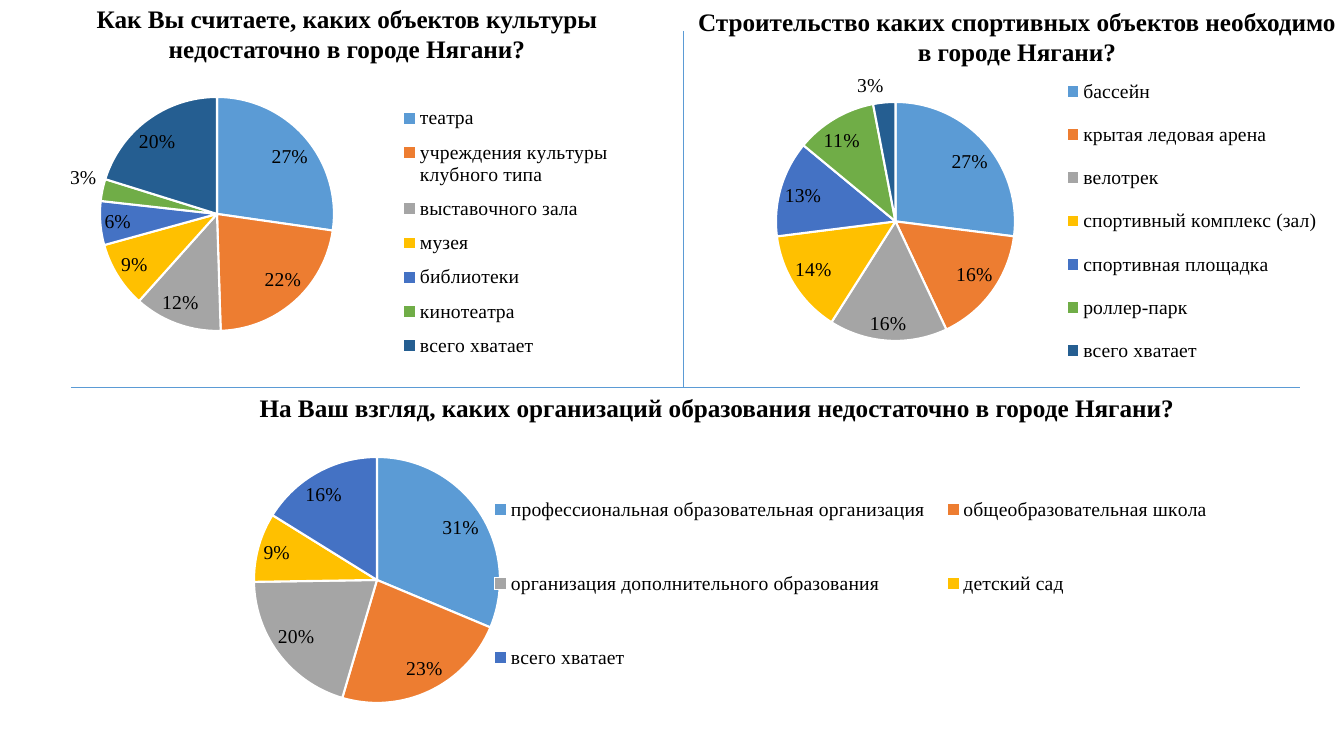
from dataclasses import dataclass

import pptx
import pptx.chart.data
import pptx.dml.color
import pptx.enum.chart
import pptx.enum.shapes
import pptx.enum.text
import pptx.oxml
import pptx.oxml.ns
import pptx.util

EMU_PER_PX = 914400 / 100.8
SERIF = "Times New Roman"
COLORS = {"text": "000000", "rule": "5B9BD5", "gap": "FFFFFF"}
SLICE_COLORS = ["5B9BD5", "ED7D31", "A5A5A5", "FFC000", "4472C4", "70AD47", "255E91"]
QUESTION_FONT = {"name": SERIF, "size": pptx.util.Pt(18), "bold": True}
ANSWER_FONT = {"name": SERIF, "size": pptx.util.Pt(14), "bold": False}
CHART_FONT = {"name": "Calibri", "size": pptx.util.Pt(10)}
LABEL_FORMAT = {
    "show_percentage": True,
    "show_value": False,
    "number_format": "0%",
    "number_format_is_linked": False,
    "position": pptx.enum.chart.XL_LABEL_POSITION.BEST_FIT,
}


@dataclass(frozen=True)
class Box:
    left: int
    top: int
    width: int
    height: int


@dataclass(frozen=True)
class Question:
    text: str
    box: Box


@dataclass(frozen=True)
class Rule:
    x1: int
    y1: int
    x2: int
    y2: int


@dataclass(frozen=True)
class Poll:
    """Survey answers; pie and legend boxes are in slide pixels."""
    box: Box
    pie: Box
    legend: Box
    answers: dict[str, int]


QUESTIONS = [
    Question("Как Вы считаете, каких объектов культуры недостаточно в городе Нягани?",
             Box(11, -2, 672, 72)),
    Question("Строительство каких спортивных объектов необходимо в городе Нягани?",
             Box(681, 1, 672, 72)),
    Question("На Ваш взгляд, каких организаций образования недостаточно в городе Нягани?",
             Box(134, 387, 1166, 40)),
]
RULES = [Rule(683, 31, 683, 387), Rule(71, 387, 1300, 387)]
POLLS = [
    Poll(Box(680, 59, 644, 324), Box(776, 102, 239, 239), Box(1060, 59, 264, 324), {
        "бассейн": 27,
        "крытая ледовая арена": 16,
        "велотрек": 16,
        "спортивный комплекс (зал)": 14,
        "спортивная площадка": 13,
        "роллер-парк": 11,
        "всего хватает": 3,
    }),
    Poll(Box(58, 441, 1182, 280), Box(254, 457, 246, 246), Box(479, 447, 744, 273), {
        "профессиональная образовательная организация": 31,
        "общеобразовательная школа": 23,
        "организация дополнительного образования": 20,
        "детский сад": 9,
        "всего хватает": 16,
    }),
    Poll(Box(-24, 83, 674, 286), Box(100, 97, 234, 234), Box(392, 95, 228, 274), {
        "театра": 27,
        "учреждения культуры клубного типа": 22,
        "выставочного зала": 12,
        "музея": 9,
        "библиотеки": 6,
        "кинотеатра": 3,
        "всего хватает": 20,
    }),
]


def px(length: int) -> pptx.util.Emu:
    return pptx.util.Emu(round(length * EMU_PER_PX))


def place(box: Box) -> list[pptx.util.Emu]:
    return [px(side) for side in (box.left, box.top, box.width, box.height)]


def rgb(color: str) -> pptx.dml.color.RGBColor:
    return pptx.dml.color.RGBColor.from_string(color)


def apply(target, values: dict) -> None:
    for attribute, value in values.items():
        setattr(target, attribute, value)


def style_font(font, values: dict) -> None:
    apply(font, values)
    font.color.rgb = rgb(COLORS["text"])


def add_question(slide, question: Question) -> None:
    frame = slide.shapes.add_textbox(*place(question.box)).text_frame
    frame.word_wrap = True
    frame.auto_size = pptx.enum.text.MSO_AUTO_SIZE.SHAPE_TO_FIT_TEXT
    paragraph = frame.paragraphs[0]
    paragraph.alignment = pptx.enum.text.PP_ALIGN.CENTER
    run = paragraph.add_run()
    run.text = question.text
    style_font(run.font, QUESTION_FONT)


def add_rule(slide, rule: Rule) -> None:
    line = slide.shapes.add_connector(
        pptx.enum.shapes.MSO_CONNECTOR.STRAIGHT,
        px(rule.x1), px(rule.y1), px(rule.x2), px(rule.y2))
    line.line.color.rgb = rgb(COLORS["rule"])
    line.line.width = pptx.util.Pt(0.5)
    effects = pptx.oxml.parse_xml(f'<a:effectLst {pptx.oxml.ns.nsdecls("a")}/>')
    line._element.spPr.append(effects)


def set_layout(parent, index: int, part: Box, whole: Box, inner: bool = False) -> None:
    """Fix a chart part at its share of the whole chart."""
    for old in parent.findall(pptx.oxml.ns.qn("c:layout")):
        parent.remove(old)
    shares = {
        "x": (part.left - whole.left) / whole.width,
        "y": (part.top - whole.top) / whole.height,
        "w": part.width / whole.width,
        "h": part.height / whole.height,
    }
    target = '<c:layoutTarget val="inner"/>' if inner else ""
    modes = '<c:xMode val="edge"/><c:yMode val="edge"/>'
    sizes = "".join(f'<c:{key} val="{share:.4f}"/>' for key, share in shares.items())
    parent.insert(index, pptx.oxml.parse_xml(
        f'<c:layout {pptx.oxml.ns.nsdecls("c")}><c:manualLayout>'
        f"{target}{modes}{sizes}</c:manualLayout></c:layout>"))


def add_poll(slide, poll: Poll) -> None:
    data = pptx.chart.data.CategoryChartData()
    data.categories = list(poll.answers)
    data.add_series("Series 1", list(poll.answers.values()))
    chart = slide.shapes.add_chart(
        pptx.enum.chart.XL_CHART_TYPE.PIE, *place(poll.box), data).chart
    chart.has_title = False
    style_font(chart.font, CHART_FONT)

    chart.has_legend = True
    chart.legend.position = pptx.enum.chart.XL_LEGEND_POSITION.RIGHT
    chart.legend.include_in_layout = False
    style_font(chart.legend.font, ANSWER_FONT)
    set_layout(chart.legend._element, 1, poll.legend, poll.box)
    plot_area = chart._chartSpace.find(".//" + pptx.oxml.ns.qn("c:plotArea"))
    set_layout(plot_area, 0, poll.pie, poll.box, inner=True)

    pie = chart.plots[0]
    pie.vary_by_categories = True
    for index, color in enumerate(SLICE_COLORS[:len(poll.answers)]):
        slice_format = pie.series[0].points[index].format
        slice_format.fill.solid()
        slice_format.fill.fore_color.rgb = rgb(color)
        slice_format.line.color.rgb = rgb(COLORS["gap"])
        slice_format.line.width = pptx.util.Pt(1.5)
    pie.has_data_labels = True
    apply(pie.data_labels, LABEL_FORMAT)
    style_font(pie.data_labels.font, ANSWER_FONT)


def main() -> None:
    deck = pptx.Presentation()
    deck.slide_width, deck.slide_height = px(1344), px(756)
    slide = deck.slides.add_slide(deck.slide_layouts[6])
    for question in QUESTIONS:
        add_question(slide, question)
    for rule in RULES:
        add_rule(slide, rule)
    for poll in POLLS:
        add_poll(slide, poll)
    deck.save("out.pptx")


if __name__ == "__main__":
    main()
